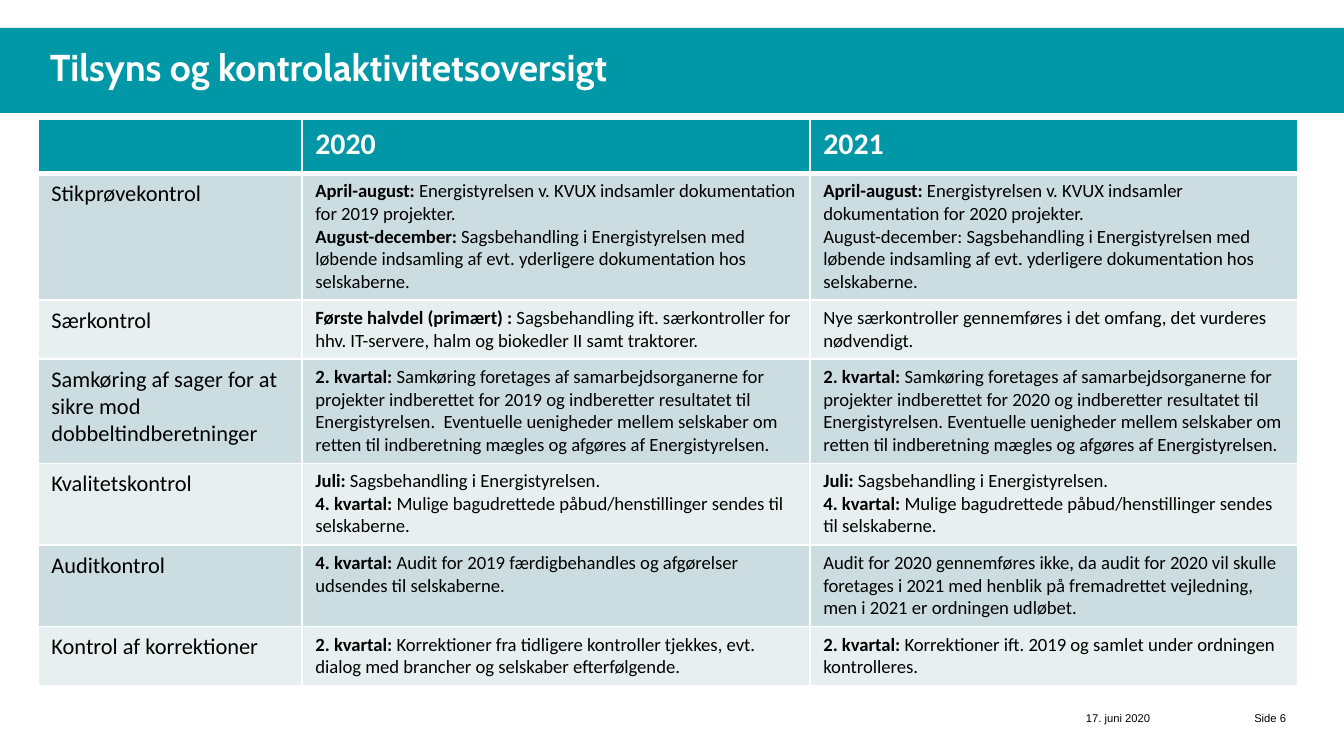
"""Build a one-page overview of supervision and control activities."""
from dataclasses import dataclass

from lxml import etree
from pptx import Presentation, util as u
from pptx.dml.color import RGBColor
from pptx.enum import shapes, text
from pptx.oxml import ns

SCALE = u.Inches(10) / 1344


@dataclass(frozen=True)
class Theme:
    teal: str = "0097A7"
    white: str = "FFFFFF"
    black: str = "000000"
    bands: tuple[str, str] = ("CCDDE1", "E7EFF1")
    title_size: int = 20
    year_size: int = 16
    topic_size: int = 12
    body_size: int = 10
    footer_size: int = 6
    title_font: str = "Cabin"
    table_font: str = "Calibri"
    footer_font: str = "Arial"


@dataclass(frozen=True)
class Entry:
    rest: str
    lead: str = ""


@dataclass(frozen=True)
class Activity:
    topic: str
    height: int
    first_year: tuple[Entry, ...]
    second_year: tuple[Entry, ...]


@dataclass(frozen=True)
class Label:
    words: str
    left: int
    top: int
    width: int
    height: int
    size: int
    font: str
    color: str
    bold: bool = False
    align: text.PP_ALIGN = text.PP_ALIGN.LEFT


THEME = Theme()
YEARS = ("", "2020", "2021")
COLUMNS = (264, 508, 488)
HEADER_HEIGHT = 49
CASEWORK = " Sagsbehandling i Energistyrelsen med løbende indsamling af evt. yderligere dokumentation hos selskaberne."
QUALITY = (
    Entry(" Sagsbehandling i Energistyrelsen.", "Juli:"),
    Entry(" Mulige bagudrettede påbud/henstillinger sendes til selskaberne.", "4. kvartal:"),
)


def sampling(year: int) -> Entry:
    """Return the sampling entry for the projects of a year."""
    return Entry(f" Energistyrelsen v. KVUX indsamler dokumentation for {year} projekter.", "April-august:")


def matching(year: int, gap: str) -> tuple[Entry, ...]:
    """Return the case-matching entry for the projects of a year."""
    return (Entry(
        f" Samkøring foretages af samarbejdsorganerne for projekter indberettet for {year} og indberetter "
        f"resultatet til Energistyrelsen.{gap}Eventuelle uenigheder mellem selskaber om retten til "
        "indberetning mægles og afgøres af Energistyrelsen.", "2. kvartal:"),)


ACTIVITIES = (
    Activity("Stikprøvekontrol", 126,
             (sampling(2019), Entry(CASEWORK, "August-december:")),
             (sampling(2020), Entry("August-december:" + CASEWORK))),
    Activity("Særkontrol", 59,
             (Entry("Sagsbehandling ift. særkontroller for hhv. IT-servere, halm og biokedler II "
                    "samt traktorer.", "Første halvdel (primært) : "),),
             (Entry("Nye særkontroller gennemføres i det omfang, det vurderes nødvendigt."),)),
    Activity("Samkøring af sager for at sikre mod dobbeltindberetninger", 104,
             matching(2019, "  "), matching(2020, " ")),
    Activity("Kvalitetskontrol", 82, QUALITY, QUALITY),
    Activity("Auditkontrol", 81,
             (Entry(" Audit for 2019 færdigbehandles og afgørelser udsendes til selskaberne.", "4. kvartal:"),),
             (Entry("Audit for 2020 gennemføres ikke, da audit for 2020 vil skulle foretages i 2021 med "
                    "henblik på fremadrettet vejledning, men i 2021 er ordningen udløbet."),)),
    Activity("Kontrol af korrektioner", 58,
             (Entry(" Korrektioner fra tidligere kontroller tjekkes, evt. dialog med brancher og selskaber "
                    "efterfølgende.", "2. kvartal:"),),
             (Entry(" Korrektioner ift. 2019 og samlet under ordningen kontrolleres.", "2. kvartal:"),)),
)
LABELS = (
    Label("Tilsyns og kontrolaktivitetsoversigt", 38, 39, 1306, 42, THEME.title_size,
          THEME.title_font, THEME.white, bold=True),
    Label("17. juni 2020", 1074, 706, 181, 40, THEME.footer_size, THEME.footer_font, THEME.black),
    Label("Side 6", 1180, 706, 118, 40, THEME.footer_size, THEME.footer_font, THEME.black,
          align=text.PP_ALIGN.RIGHT),
)


def px(length: int) -> int:
    """Turn pixels into EMU."""
    return round(length * SCALE)


def add_span(para, words: str, *, size: int, font: str, color: str, bold: bool = False) -> None:
    """Append one formatted run to a paragraph."""
    span = para.add_run()
    span.text = words
    span.font.size = u.Pt(size)
    span.font.name = font
    span.font.bold = bold
    span.font.color.rgb = RGBColor.from_string(color)


def add_label(page, label: Label) -> None:
    """Draw one line of text in its own box."""
    box = page.shapes.add_textbox(*map(px, (label.left, label.top, label.width, label.height)))
    frame = box.text_frame
    frame.word_wrap = True
    frame.margin_left = frame.margin_right = px(12)
    frame.margin_top = frame.margin_bottom = px(5)
    para = frame.paragraphs[0]
    para.alignment = label.align
    add_span(para, label.words, size=label.size, font=label.font, color=label.color, bold=label.bold)


def add_borders(cell, *, bottom: int) -> None:
    """Give a cell white borders with its own bottom width in points."""
    properties = cell._tc.get_or_add_tcPr()
    widths = {"a:lnL": 1, "a:lnR": 1, "a:lnT": 1, "a:lnB": bottom}
    for tag, width in widths.items():
        line = etree.SubElement(properties, ns.qn(tag), w=str(u.Pt(width)))
        fill = etree.SubElement(line, ns.qn("a:solidFill"))
        etree.SubElement(fill, ns.qn("a:srgbClr"), val=THEME.white)


def fill_cell(cell, entries: tuple[Entry, ...], *, fill: str, size: int,
              color: str = THEME.black, bottom: int = 1) -> None:
    """Write entries, each with a bold lead, into a filled cell."""
    add_borders(cell, bottom=bottom)
    cell.fill.solid()
    cell.fill.fore_color.rgb = RGBColor.from_string(fill)
    frame = cell.text_frame
    for index, entry in enumerate(entries):
        para = frame.add_paragraph() if index else frame.paragraphs[0]
        for words, bold in ((entry.lead, True), (entry.rest, False)):
            if words:
                add_span(para, words, size=size, font=THEME.table_font, color=color, bold=bold)


def add_overview(page, activities: tuple[Activity, ...]) -> None:
    """Draw the table of activities by year."""
    heights = (HEADER_HEIGHT, *(activity.height for activity in activities))
    table = page.shapes.add_table(len(heights), len(COLUMNS), px(38), px(119),
                                  px(sum(COLUMNS)), px(sum(heights))).table
    for column, width in zip(table.columns, COLUMNS):
        column.width = px(width)
    for row, height in zip(table.rows, heights):
        row.height = px(height)
    for column, year in enumerate(YEARS):
        fill_cell(table.cell(0, column), (Entry("", year),), fill=THEME.teal,
                  size=THEME.year_size, color=THEME.white, bottom=3)
    for row, activity in enumerate(activities, 1):
        fill = THEME.bands[(row - 1) % 2]
        fill_cell(table.cell(row, 0), (Entry(activity.topic),), fill=fill, size=THEME.topic_size)
        for column, entries in enumerate((activity.first_year, activity.second_year), 1):
            fill_cell(table.cell(row, column), entries, fill=fill, size=THEME.body_size)


def add_band(page) -> None:
    """Draw the coloured band behind the title."""
    band = page.shapes.add_shape(shapes.MSO_SHAPE.RECTANGLE, 0, px(28), px(1349), px(85))
    band.shadow.inherit = False
    band.fill.solid()
    band.fill.fore_color.rgb = RGBColor.from_string(THEME.teal)
    band.line.fill.background()


def main() -> None:
    """Build and save the deck."""
    deck = Presentation()
    deck.slide_width, deck.slide_height = px(1344), px(756)
    page = deck.slides.add_slide(deck.slide_layouts[6])
    add_band(page)
    add_overview(page, ACTIVITIES)
    for label in LABELS:
        add_label(page, label)
    deck.save("out.pptx")


if __name__ == "__main__":
    main()
